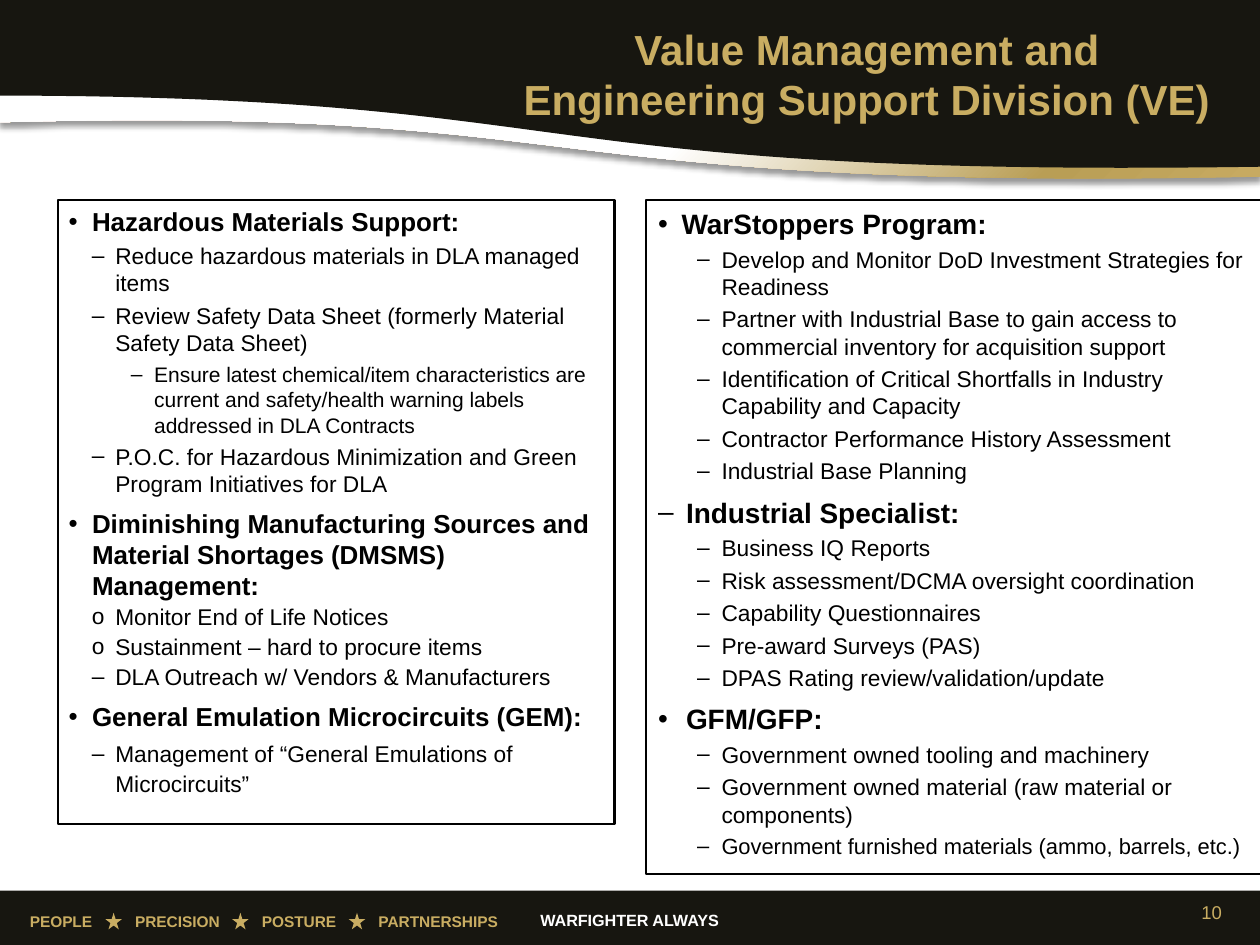
from dataclasses import dataclass

from lxml.etree import SubElement
from pptx import Presentation
from pptx.dml.color import RGBColor
from pptx.enum.shapes import MSO_SHAPE
from pptx.enum.text import MSO_ANCHOR, MSO_AUTO_SIZE, PP_ALIGN
from pptx.oxml import parse_xml
from pptx.oxml.ns import nsdecls, qn
from pptx.util import Pt


@dataclass(frozen=True)
class Theme:
    font: str = "Arial"
    gold: RGBColor = RGBColor.from_string("C9AD62")
    dark: RGBColor = RGBColor.from_string("171610")
    black: RGBColor = RGBColor.from_string("000000")
    white: RGBColor = RGBColor.from_string("FFFFFF")
    sweep: tuple = ((55, "FFFFFF"), (84, "B99E55"), (100, "C7AA61"))
    title: float = 27.2
    left_heading: float = 16.8
    right_heading: float = 18.1
    body: float = 14.7
    detail: float = 13.6
    closing: float = 14.2
    motto: float = 10.5
    values: float = 10
    number: float = 12


theme = Theme()
WIDTH, HEIGHT = 816, 612

deck = Presentation()
deck.slide_width, deck.slide_height = Pt(WIDTH), Pt(HEIGHT)
page = deck.slides.add_slide(deck.slide_layouts[6])


def style(para, size, color, bold=False, align=PP_ALIGN.LEFT):
    para.alignment = align
    para.font.name = theme.font
    para.font.size = Pt(size)
    para.font.bold = bold
    para.font.color.rgb = color


def add_shape(kind, left, top, width, height, fill=None):
    shape = page.shapes.add_shape(kind, Pt(left), Pt(top), Pt(width), Pt(height))
    shape.shadow.inherit = False
    if fill is None:
        shape.fill.background()
    else:
        shape.fill.solid()
        shape.fill.fore_color.rgb = fill
    shape.line.fill.background()
    return shape


# Header waves: a flat top and a curved lower edge
STEPS = 60
waves = []
for top, curve in (
    (42.5, ((0, 79.2), (395.3, 68.4), (326.9, 123.8), (WIDTH, 114.5))),
    (0, ((0, 61.9), (393.1, 62.6), (325.4, 115.2), (WIDTH, 108))),
):
    edge = []
    for step in range(STEPS + 1):
        t = step / STEPS
        weights = ((1 - t) ** 3, 3 * t * (1 - t) ** 2, 3 * t * t * (1 - t), t ** 3)
        edge.append(tuple(
            Pt(sum(weight * point[axis] for weight, point in zip(weights, curve)))
            for axis in (0, 1)
        ))
    builder = page.shapes.build_freeform(Pt(WIDTH), Pt(top), scale=1.0)
    builder.add_line_segments([(Pt(0), Pt(top))] + edge, close=True)
    wave = builder.convert_to_shape()
    wave.shadow.inherit = False
    wave.line.fill.background()
    waves.append(wave)

gold_wave, dark_wave = waves
dark_wave.fill.solid()
dark_wave.fill.fore_color.rgb = theme.dark

# Radial sweep and soft shadow of the gold wave
stops = "".join(
    f'<a:gs pos="{place * 1000}"><a:srgbClr val="{color}"/></a:gs>'
    for place, color in theme.sweep
)
properties = gold_wave.element.spPr
properties.find(qn("a:custGeom")).addnext(parse_xml(
    f'<a:gradFill {nsdecls("a")} rotWithShape="1"><a:gsLst>{stops}</a:gsLst>'
    '<a:path path="circle"><a:fillToRect r="100000" b="100000"/></a:path></a:gradFill>'
))
properties.find(qn("a:effectLst")).append(parse_xml(
    f'<a:outerShdw {nsdecls("a")} blurRad="{Pt(4)}" dist="{Pt(3)}" dir="5400000" '
    'algn="t" rotWithShape="0"><a:srgbClr val="000000"><a:alpha val="40000"/>'
    '</a:srgbClr></a:outerShdw>'
))

# Footer band
add_shape(MSO_SHAPE.RECTANGLE, 0, 576.7, WIDTH, HEIGHT - 576.7, theme.dark)

# Title, motto, values and page number
value_tabs = (68.2, 150.3, 225.8)
values = "\t".join(("PEOPLE", "PRECISION", "POSTURE", "PARTNERSHIPS"))
for text, place, size, color, bold, align in (
    ("WARFIGHTER ALWAYS", (321.8, 586.1, 172.1, 20.2), theme.motto, theme.white, True, PP_ALIGN.CENTER),
    (values, (12.2, 586.8, 331.9, 20.2), theme.values, theme.gold, True, PP_ALIGN.LEFT),
    ("10", (556.6, 574.6, 241.9, 32.4), theme.number, theme.gold, False, PP_ALIGN.RIGHT),
    ("Value Management and Engineering Support Division (VE)",
     (325.4, 10.8, 472.3, 67.7), theme.title, theme.gold, True, PP_ALIGN.CENTER),
):
    box = page.shapes.add_textbox(*(Pt(length) for length in place))
    frame = box.text_frame
    frame.word_wrap = True
    para = frame.paragraphs[0]
    para.text = text
    if text == values:
        tabs = SubElement(para._p.get_or_add_pPr(), qn("a:tabLst"))
        for tab in value_tabs:
            SubElement(tabs, qn("a:tab"), pos=str(Pt(tab)), algn="l")
    elif size == theme.number:
        frame.vertical_anchor = MSO_ANCHOR.MIDDLE
    elif size == theme.title:
        frame.margin_left = frame.margin_right = Pt(8)
        frame.margin_top = frame.margin_bottom = Pt(4.2)
    if size in (theme.motto, theme.values):
        frame.auto_size = MSO_AUTO_SIZE.SHAPE_TO_FIT_TEXT
    style(para, size, color, bold, align)

# Stars between the values
for tab in value_tabs:
    add_shape(MSO_SHAPE.STAR_5_POINT, tab, 591.1, 10.8, 10.8, theme.gold)

# Panels: (level, bullet, text, optional size or line spacing)
left_items = (
    (0, "•", "Hazardous Materials Support:"),
    (1, "‒", "Reduce hazardous materials in DLA managed items"),
    (1, "‒", "Review Safety Data Sheet (formerly Material Safety Data Sheet)"),
    (2, "‒", "Ensure latest chemical/item characteristics are current and "
             "safety/health warning labels addressed in DLA Contracts"),
    (1, "‒", "P.O.C. for Hazardous Minimization and Green Program Initiatives for DLA"),
    (0, "•", "Diminishing Manufacturing Sources and Material Shortages (DMSMS) Management:"),
    (1, "o", "Monitor End of Life Notices", {"spacing": 0.9}),
    (1, "o", "Sustainment – hard to procure items", {"spacing": 0.9}),
    (1, "‒", "DLA Outreach w/ Vendors & Manufacturers", {"spacing": 0.9}),
    (0, "•", "General Emulation Microcircuits (GEM):"),
    (1, "‒", "Management of “General Emulations of Microcircuits”", {"spacing": 1.1}),
)
right_items = (
    (0, "•", "WarStoppers Program:", {"indent": 15.1}),
    (1, "–", "Develop and Monitor DoD Investment Strategies for Readiness"),
    (1, "–", "Partner with Industrial Base to gain access to commercial inventory "
             "for acquisition support"),
    (1, "–", "Identification of Critical Shortfalls in Industry Capability and Capacity"),
    (1, "–", "Contractor Performance History Assessment"),
    (1, "–", "Industrial Base Planning"),
    (0, "‒", "Industrial Specialist:"),
    (1, "‒", "Business IQ Reports"),
    (1, "‒", "Risk assessment/DCMA oversight coordination"),
    (1, "‒", "Capability Questionnaires"),
    (1, "‒", "Pre-award Surveys (PAS)"),
    (1, "‒", "DPAS Rating review/validation/update"),
    (0, "•", "GFM/GFP:"),
    (1, "–", "Government owned tooling and machinery"),
    (1, "–", "Government owned material (raw material or components)"),
    (1, "–", "Government furnished materials (ammo, barrels, etc.)", {"size": theme.closing}),
)
left_levels = ((15.1, 15.1, theme.left_heading), (30.2, 15.1, theme.body), (55.4, 15.1, theme.detail))
right_levels = ((18, 18, theme.right_heading), (41, 15.8, theme.body))
for place, margins, levels, items in (
    ((37.4, 129.6, 360.7, 403.9), (7.2, 3.6), left_levels, left_items),
    ((418.3, 129.6, 398.2, 436.3), (8, 4.2), right_levels, right_items),
):
    panel = add_shape(MSO_SHAPE.RECTANGLE, *place)
    panel.line.color.rgb = theme.black
    panel.line.width = Pt(1.5)
    frame = panel.text_frame
    frame.word_wrap = True
    frame.vertical_anchor = MSO_ANCHOR.TOP
    frame.margin_left = frame.margin_right = Pt(margins[0])
    frame.margin_top = frame.margin_bottom = Pt(margins[1])
    for index, (level, bullet, text, *extra) in enumerate(items):
        options = extra[0] if extra else {}
        margin, hanging, size = levels[level]
        if "indent" in options:
            margin = hanging = options["indent"]
        para = frame.paragraphs[0] if index == 0 else frame.add_paragraph()
        para.text = text
        para.level = level
        layout = para._p.get_or_add_pPr()
        layout.set("marL", str(Pt(margin)))
        layout.set("indent", str(-Pt(hanging)))
        SubElement(layout, qn("a:buFont"), typeface=theme.font)
        SubElement(layout, qn("a:buChar"), char=bullet)
        para.space_before = Pt(3.4 if level == 0 and index else 0)
        para.space_after = Pt(3.4)
        para.line_spacing = options.get("spacing", 1.0)
        style(para, options.get("size", size), theme.black, level == 0)

deck.save("out.pptx")
